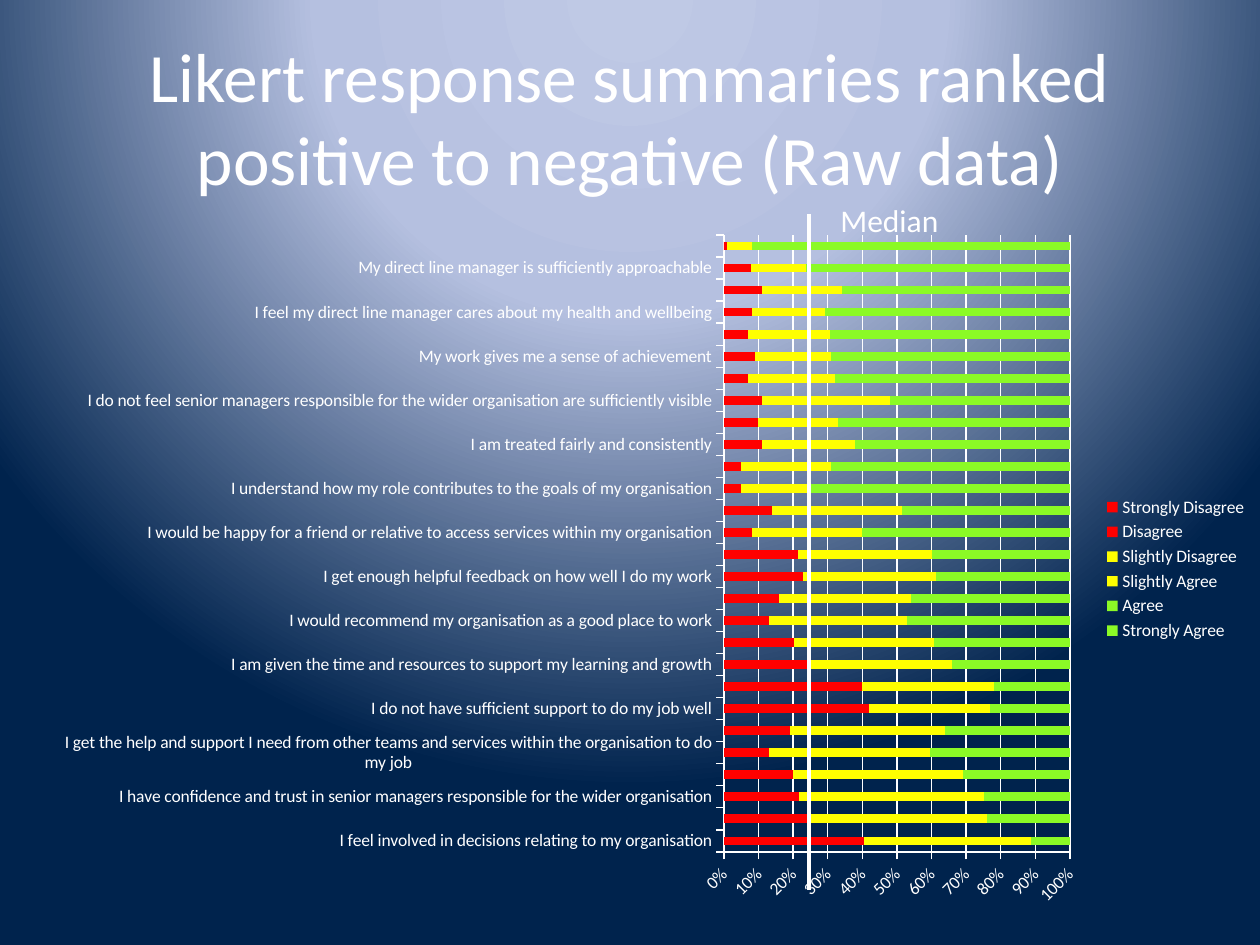
from lxml import etree
from pptx import Presentation
from pptx import util as u
from pptx.chart.data import CategoryChartData
from pptx.dml.color import RGBColor
from pptx.enum import chart as charts, shapes, text
from pptx.oxml import parse_xml
from pptx.oxml.ns import nsdecls, qn

TITLE = "Likert response summaries ranked positive to negative (Raw data)"
STATEMENTS = [
    "I feel involved in decisions relating to my organisation",
    "I am confident performance is managed well within my team",
    "I have confidence and trust in senior managers responsible for the wider organisation",
    "I am confident my ideas and suggestions are acted upon",
    "I get the help and support I need from other teams and services within the organisation to do my job",
    "I feel my organisation cares about my health and wellbeing",
    "I do not have sufficient support to do my job well",
    "I do not feel involved in decisions relating to my team",
    "I am given the time and resources to support my learning and growth",
    "I feel involved in decisions relating to my job",
    "I would recommend my organisation as a good place to work",
    "I am confident my ideas and suggestions are listened to",
    "I get enough helpful feedback on how well I do my work",
    "I feel appreciated for the work I do",
    "I would be happy for a friend or relative to access services within my organisation",
    "I am confident performance is managed well within my organisation",
    "I understand how my role contributes to the goals of my organisation",
    "I get the information I need to do my job well",
    "I am treated fairly and consistently",
    "I am treated with dignity and respect as an individual",
    "I do not feel senior managers responsible for the wider organisation are sufficiently visible",
    "My team works well together",
    "My work gives me a sense of achievement",
    "I would recommend my team as a good one to be part of",
    "I feel my direct line manager cares about my health and wellbeing",
    "I have confidence and trust in my direct line manager",
    "My direct line manager is sufficiently approachable",
    "I am clear what my duties and responsibilities are",
]
WHITE = RGBColor(0xFF, 0xFF, 0xFF)
RED = RGBColor(0xFF, 0x00, 0x00)
YELLOW = RGBColor(0xFF, 0xFF, 0x00)
GREEN = RGBColor(0x8B, 0xFA, 0x26)
RESPONSES = [
    ("Strongly Disagree", RED, [14, 8, 8, 6, 4, 7, 9, 8, 9, 8, 5, 5, 9, 9, 3, 5, 1, 2, 4, 4, 2, 2, 4, 3, 4, 4, 3, 0]),
    ("Disagree", RED, [26, 16, 14, 14, 9, 12, 33, 32, 16, 12, 8, 11, 14, 12, 5, 9, 4, 3, 7, 6, 9, 5, 5, 4, 4, 7, 5, 1]),
    ("Slightly Disagree", YELLOW,
     [24, 21, 18, 15, 13, 13, 15, 17, 15, 14, 10, 12, 15, 11, 8, 13, 4, 6, 8, 7, 11, 7, 4, 6, 6, 7, 4, 2]),
    ("Slightly Agree", YELLOW,
     [24, 31, 36, 34, 33, 32, 20, 21, 26, 26, 30, 26, 24, 27, 24, 25, 16, 20, 19, 16, 26, 18, 18, 18, 15, 16, 12, 5]),
    ("Agree", GREEN,
     [10, 22, 22, 27, 36, 31, 18, 16, 27, 32, 40, 38, 31, 31, 50, 39, 60, 53, 45, 48, 33, 47, 46, 45, 43, 38, 41, 50]),
    ("Strongly Agree", GREEN,
     [1, 2, 3, 4, 4, 5, 5, 6, 7, 7, 7, 8, 8, 8, 10, 10, 15, 16, 17, 19, 19, 21, 23, 25, 27, 28, 36, 41]),
]
GRADIENT = [(0, "BFC9E5"), (40, "B5C0E0"), (100, "00234D")]
FONT = "Calibri"

# Places in px: left, top, width, height
TITLE_BOX = (63, 38, 1134, 157)
CHART_BOX = (63, 220, 1197, 698)
PLOT_BOX = (724, 235, 346, 617)
MEDIAN_BOX = (828, 195, 198, 50)
MEDIAN_X, MEDIAN_TOP, MEDIAN_BOTTOM = 809, 214, 890


def px(value):
    return round(value * 914400 / 126)


def place(box):
    return [px(value) for value in box]


def style(font, size):
    font.name, font.size = FONT, u.Pt(size)
    font.color.rgb = WHITE


presentation = Presentation()
presentation.slide_width, presentation.slide_height = px(1260), px(945)
slide = presentation.slides.add_slide(presentation.slide_layouts[5])

# Background: circular gradient centred above the slide
stops = "".join(f'<a:gs pos="{at * 1000}"><a:srgbClr val="{colour}"/></a:gs>' for at, colour in GRADIENT)
slide.element.cSld.insert(0, parse_xml(
    f'<p:bg {nsdecls("p", "a")}><p:bgPr><a:gradFill rotWithShape="1"><a:gsLst>{stops}</a:gsLst>'
    '<a:path path="circle"><a:fillToRect l="50000" t="-80000" r="50000" b="180000"/></a:path>'
    '</a:gradFill><a:effectLst/></p:bgPr></p:bg>'))

# Title
title = slide.shapes.title
title.left, title.top, title.width, title.height = place(TITLE_BOX)
title.text_frame.text = TITLE
title.text_frame.vertical_anchor = text.MSO_ANCHOR.MIDDLE
title.text_frame.paragraphs[0].alignment = text.PP_ALIGN.CENTER
style(title.text_frame.paragraphs[0].runs[0].font, 39.6)

# Chart
data = CategoryChartData(number_format="###0")
data.categories = STATEMENTS
for name, _, values in RESPONSES:
    data.add_series(name, values)
chart = slide.shapes.add_chart(charts.XL_CHART_TYPE.BAR_STACKED_100, *place(CHART_BOX), data).chart
style(chart.font, 10)
chart.has_title = False
chart.has_legend = True
chart.legend.position = charts.XL_LEGEND_POSITION.RIGHT
chart.legend.include_in_layout = False
plot = chart.plots[0]
plot.gap_width, plot.overlap, plot.vary_by_categories = 150, 100, False
for series, (_, colour, _) in zip(plot.series, RESPONSES):
    series.format.fill.solid()
    series.format.fill.fore_color.rgb = colour

# Axes
for axis in (chart.category_axis, chart.value_axis):
    axis.major_tick_mark = charts.XL_TICK_MARK.OUTSIDE
    axis.format.line.color.rgb = WHITE
    style(axis.tick_labels.font, 10)
value_axis = chart.value_axis
value_axis.has_major_gridlines = True
value_axis.major_gridlines.format.line.color.rgb = WHITE
value_axis.major_unit = 0.1
value_axis.tick_labels.number_format = "0%"
value_axis.tick_labels.number_format_is_linked = False
value_axis._element.find(qn("c:txPr")).find(qn("a:bodyPr")).set("rot", "-2700000")

# Inner plot area as fractions of the chart
left, top, width, height = CHART_BOX
fractions = {"x": (PLOT_BOX[0] - left) / width, "y": (PLOT_BOX[1] - top) / height,
             "w": PLOT_BOX[2] / width, "h": PLOT_BOX[3] / height}
plot_area = chart._chartSpace.chart.plotArea
for layout in plot_area.findall(qn("c:layout")):
    plot_area.remove(layout)
layout = etree.Element(qn("c:layout"))
manual = etree.SubElement(layout, qn("c:manualLayout"))
settings = [("layoutTarget", "inner"), ("xMode", "edge"), ("yMode", "edge")]
for tag, value in settings + [(key, f"{part:.4f}") for key, part in fractions.items()]:
    etree.SubElement(manual, qn(f"c:{tag}")).set("val", value)
plot_area.insert(0, layout)

# Median line and label
median = slide.shapes.add_connector(
    shapes.MSO_CONNECTOR.STRAIGHT, px(MEDIAN_X), px(MEDIAN_TOP), px(MEDIAN_X), px(MEDIAN_BOTTOM))
median.line.color.rgb = WHITE
median.line.width = u.Pt(2.5)
etree.SubElement(median._element.spPr, qn("a:effectLst"))
label = slide.shapes.add_textbox(*place(MEDIAN_BOX))
label.text_frame.word_wrap = True
label.text_frame.text = "Median"
style(label.text_frame.paragraphs[0].runs[0].font, 18)

presentation.save("out.pptx")
